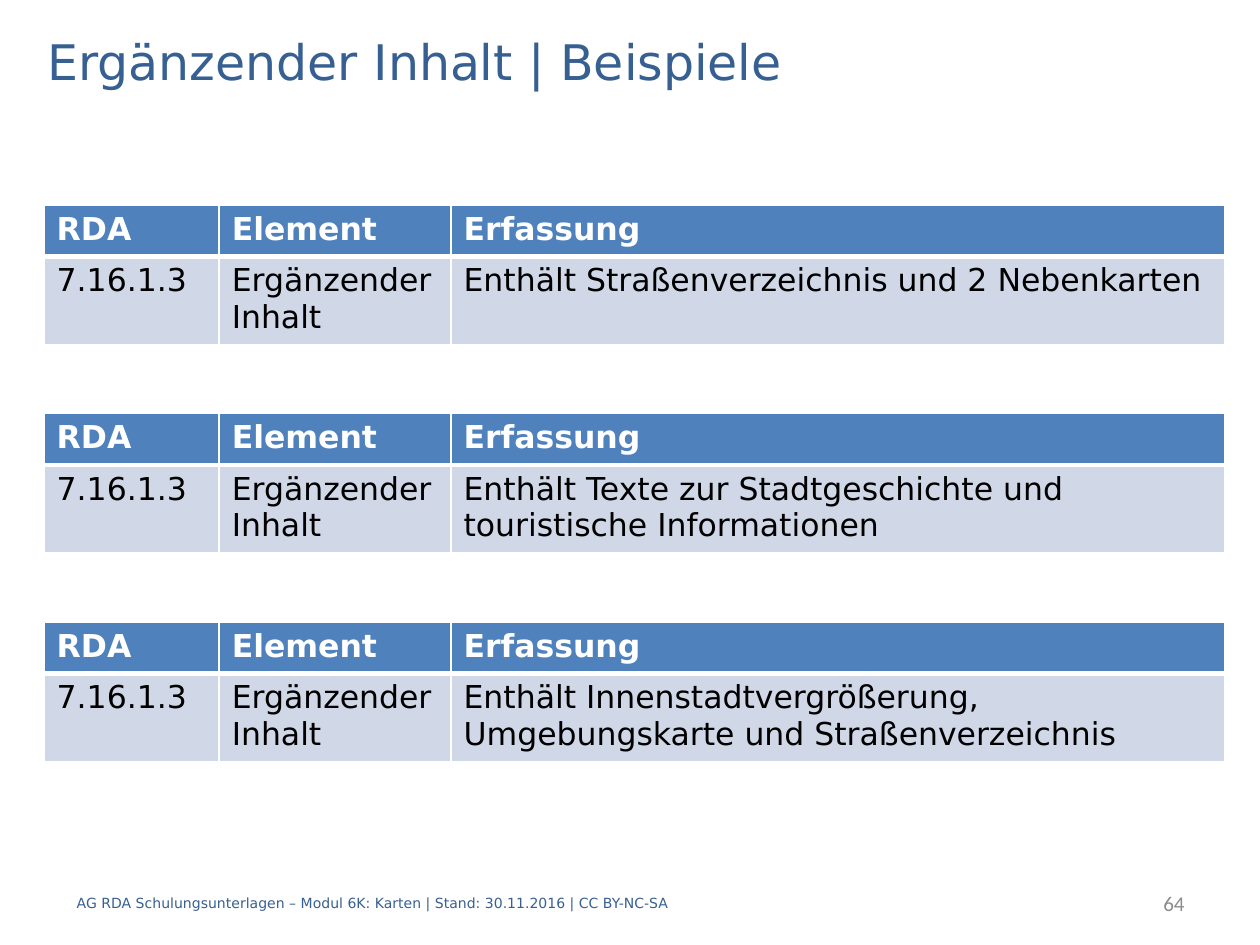
from lxml.etree import SubElement
from pptx import Presentation
from pptx.dml.color import RGBColor
from pptx.enum.text import MSO_ANCHOR as Anchor, PP_ALIGN as Align
from pptx.oxml.ns import qn
from pptx.util import Inches, Pt

NAVY = RGBColor(0x37, 0x60, 0x92)
BLUE = RGBColor(0x4F, 0x81, 0xBD)
PALE = RGBColor(0xD0, 0xD8, 0xE8)
GRAY = RGBColor(0x8C, 0x8C, 0x8C)
WHITE = RGBColor(0xFF, 0xFF, 0xFF)
BLACK = RGBColor(0, 0, 0)

HEADER = ("RDA", "Element", "Erfassung")
EXAMPLES = (
    "Enthält Straßenverzeichnis und 2 Nebenkarten",
    "Enthält Texte zur Stadtgeschichte und touristische Informationen",
    "Enthält Innenstadtvergrößerung, Umgebungskarte und Straßenverzeichnis",
)


def write(tf, text, size=18, color=BLACK, font="DejaVu Sans", bold=False,
          align=Align.LEFT):
    p = tf.paragraphs[0]
    p.alignment = align
    r = p.add_run()
    r.text = text
    r.font.name, r.font.size, r.font.bold = font, Pt(size), bold
    r.font.color.rgb = color


def set_borders(cell, **widths):
    """Draw white cell borders; widths in points for L, R, T and B."""
    tcPr = cell._tc.get_or_add_tcPr()
    for i, side in enumerate("LRTB"):
        ln = SubElement(tcPr, qn(f"a:ln{side}"), w=str(Pt(widths.get(side, 1))))
        fill = SubElement(ln, qn("a:solidFill"))
        SubElement(fill, qn("a:srgbClr"), val=str(WHITE))
        tcPr.insert(i, ln)  # borders come before the fill


class Deck:
    """Slide on a grid of 100 columns and 75 rows."""

    def __init__(self, columns=100, rows=75):
        self.prs = Presentation()
        self.prs.slide_width, self.prs.slide_height = Inches(10), Inches(7.5)
        self.col = self.prs.slide_width / columns
        self.row = self.prs.slide_height / rows
        self.s = self.prs.slides.add_slide(self.prs.slide_layouts[6])

    def box(self, x, y, w, h):
        return (round(x * self.col), round(y * self.row),
                round(w * self.col), round(h * self.row))

    def text(self, x, y, w, h, text, **fmt):
        tf = self.s.shapes.add_textbox(*self.box(x, y, w, h)).text_frame
        tf.word_wrap = True
        tf.vertical_anchor = Anchor.MIDDLE
        write(tf, text, **fmt)

    def table(self, x, y, widths, heights, rows):
        frame = self.s.shapes.add_table(
            len(rows), len(widths), *self.box(x, y, sum(widths), sum(heights)))
        table = frame.table
        for column, w in zip(table.columns, widths):
            column.width = round(w * self.col)
        for i, (h, values) in enumerate(zip(heights, rows)):
            table.rows[i].height = round(h * self.row)
            head = i == 0
            for j, value in enumerate(values):
                cell = table.cell(i, j)
                cell.fill.solid()
                cell.fill.fore_color.rgb = BLUE if head else PALE
                set_borders(cell, **({"B": 3} if head else {"T": 3}))
                write(cell.text_frame, value, bold=head,
                      color=WHITE if head else BLACK)


def main():
    deck = Deck()

    # Title
    deck.text(2.8, 2, 97.2, 5.6, "Ergänzender Inhalt | Beispiele",
              size=28, color=NAVY)

    # One table per example
    for i, example in enumerate(EXAMPLES):
        deck.table(3.5, 16.25 + i * 16.55, (13.9, 18.4, 61.4), (4.1, 7),
                   (HEADER, ("7.16.1.3", "Ergänzender Inhalt", example)))

    # Footer and page number
    deck.text(5.1, 69.7, 83.5, 4,
              "AG RDA Schulungsunterlagen – Modul 6K: Karten | "
              "Stand: 30.11.2016 | CC BY-NC-SA", size=8, color=NAVY)
    deck.text(79.1, 69.7, 15.9, 4, "64", size=12, color=GRAY,
              font="Calibri", align=Align.RIGHT)

    deck.prs.save("out.pptx")


if __name__ == "__main__":
    main()
